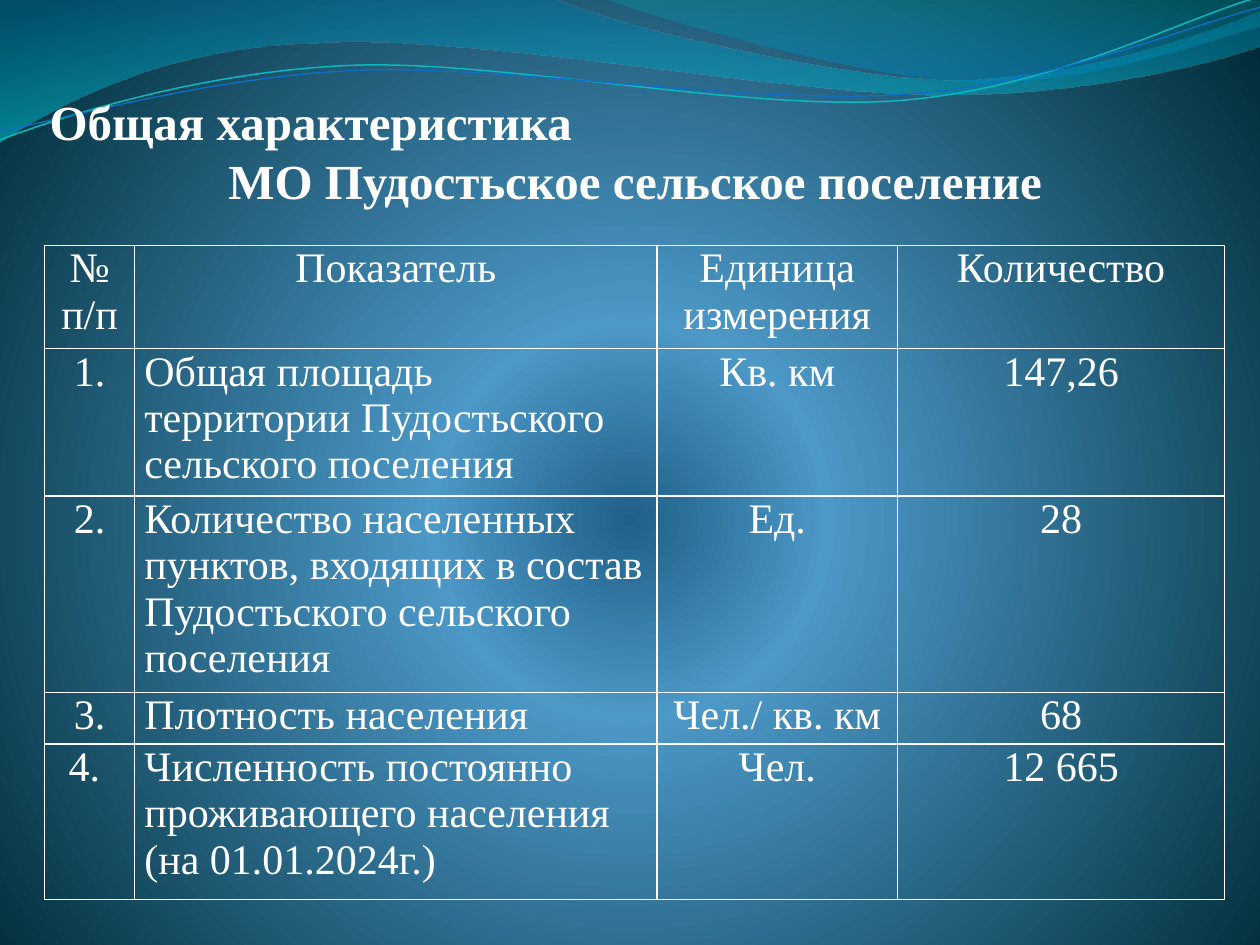
from dataclasses import dataclass

from lxml import etree
from pptx import Presentation
from pptx.dml.color import RGBColor
from pptx.enum.text import MSO_ANCHOR, PP_ALIGN as Align
from pptx.oxml import parse_xml
from pptx.oxml.ns import nsdecls, qn
from pptx.util import Cm, Pt


@dataclass(frozen=True)
class Theme:
    font: str = "Times New Roman"
    ink: str = "FFFFFF"
    title_size: int = 28
    title_leading: int = 34
    table_size: int = 24
    rule_width: int = 1
    # Gradient stops: position %, colour, opacity %
    backdrop: tuple = ((0, "1F6088", 100), (25, "4C98C7", 100), (100, "002C38", 100))
    wide_wave: tuple = ((0, "0074A1", 45), (100, "00C6CF", 55))
    small_wave: tuple = ((0, "00A1A9", 30), (80, "008BBF", 45))
    teal_line: str = "0AB8BF"
    blue_line: str = "0F6FC6"


THEME = Theme()
DOWNWARD = '<a:lin {} ang="5400000" scaled="0"/>'
RADIAL = ('<a:path {} path="circle">'
          '<a:fillToRect l="10000" t="110000" r="10000" b="100000"/></a:path>')

# Wave outlines in cm: a pair is a straight step, six numbers are a Bézier step
WIDE_WAVE = [(0, 0), (11.18, -0.03), (12.09, 0.43, 16.87, 1.6, 19.25, 1.6),
             (21.67, 1.6, 24.33, 0.66, 25.4, 0.23), (25.43, 0.91),
             (24.97, 1.12, 22.1, 1.93, 18.95, 1.91),
             (15.8, 1.91, 9.7, 0.71, 6.53, 0.86),
             (3.28, 0.91, 1.17, 2.11, -0.03, 2.87), (0, 0)]
SMALL_WAVE = [(12.17, -0.03), (12.93, 0.28, 17.32, 1.57, 19.53, 1.65),
              (21.74, 1.75, 24.41, 0.81, 25.4, 0.53), (25.4, 0), (12.17, -0.03)]
TEAL_LINE = [(0, 2.82), (1.22, 2.36, 4.01, 1.45, 7.04, 1.32),
             (10.03, 1.19, 15.06, 2.26, 18.11, 2.03),
             (21.16, 1.8, 23.83, 0.38, 25.35, -0.05)]
BLUE_LINE = [(0, 2.64), (1.19, 2.44, 4.17, 1.55, 7.19, 1.42),
             (10.24, 1.3, 15.16, 2.13, 18.21, 1.9),
             (21.23, 1.7, 23.9, 0.53, 25.4, 0.15)]

TITLE = [("Общая характеристика", Align.LEFT),
         ("МО Пудостьское сельское поселение", Align.CENTER)]
COLUMN_WIDTHS = [1.81, 10.54, 4.84, 6.6]
ROW_HEIGHTS = [2.08, 2.97, 3.96, 1.04, 3.13]
INDICATORS = [
    ("№ п/п", "Показатель", "Единица измерения", "Количество"),
    ("1.", "Общая площадь территории Пудостьского сельского поселения",
     "Кв. км", "147,26"),
    ("2.", "Количество населенных пунктов, входящих в состав "
     "Пудостьского сельского поселения", "Ед.", "28"),
    ("3.", "Плотность населения", "Чел./ кв. км", "68"),
    ("4. ", "Численность постоянно проживающего населения (на 01.01.2024г.)",
     "Чел.", "12 665"),
]


def paint_gradient(fill, owner, stops, direction):
    """Give fill, which lives inside the XML element owner, stops with opacity."""
    fill.gradient()
    gradient = owner.find(".//" + qn("a:gradFill"))
    for child in list(gradient):
        gradient.remove(child)
    stop_list = etree.SubElement(gradient, qn("a:gsLst"))
    for position, colour, opacity in stops:
        stop = etree.SubElement(stop_list, qn("a:gs"), pos=str(position * 1000))
        rgb = etree.SubElement(stop, qn("a:srgbClr"), val=colour)
        if opacity < 100:
            etree.SubElement(rgb, qn("a:alpha"), val=str(opacity * 1000))
    gradient.append(parse_xml(direction.format(nsdecls("a"))))


def add_outline(slide, left, top, outline, close):
    """Build a freeform through all points, then bend its Bézier steps."""
    points = [(Cm(left + x), Cm(top + y)) for step in outline
              for x, y in zip(step[::2], step[1::2])]
    builder = slide.shapes.build_freeform(*points[0])
    builder.add_line_segments(points[1:], close=close)
    shape = builder.convert_to_shape()
    shape.shadow.inherit = False
    segments = iter(shape.element.findall(".//" + qn("a:lnTo")))
    for step in outline[1:]:
        first = next(segments)
        if len(step) == 6:
            first.tag = qn("a:cubicBezTo")
            for _ in range(2):
                segment = next(segments)
                first.append(segment[0])
                segment.getparent().remove(segment)
    return shape


def add_waves(slide, left, top):
    for outline, stops in ((WIDE_WAVE, THEME.wide_wave), (SMALL_WAVE, THEME.small_wave)):
        wave = add_outline(slide, left, top, outline, close=True)
        paint_gradient(wave.fill, wave.element, stops, DOWNWARD)
        wave.line.fill.background()
    for outline, colour, width in ((TEAL_LINE, THEME.teal_line, 0.85),
                                   (BLUE_LINE, THEME.blue_line, 0.75)):
        wave = add_outline(slide, left, top, outline, close=False)
        wave.fill.background()
        wave.line.color.rgb = RGBColor.from_string(colour)
        wave.line.width = Pt(width)


def style_text(paragraph, size, align, bold=False):
    paragraph.alignment = align
    font = paragraph.font
    font.name, font.size, font.bold = THEME.font, Pt(size), bold
    font.color.rgb = RGBColor.from_string(THEME.ink)


def add_title(slide, left, top, width, height):
    frame = slide.shapes.add_textbox(Cm(left), Cm(top), Cm(width), Cm(height)).text_frame
    frame.word_wrap = True
    frame.text = "\n".join(line for line, _ in TITLE)
    for paragraph, (_, align) in zip(frame.paragraphs, TITLE):
        paragraph.line_spacing = Pt(THEME.title_leading)
        style_text(paragraph, THEME.title_size, align, bold=True)


def set_borders(cell):
    properties = cell._tc.get_or_add_tcPr()
    for index, side in enumerate(("lnL", "lnR", "lnT", "lnB")):
        properties.insert(index, parse_xml(
            f'<a:{side} {nsdecls("a")} w="{Pt(THEME.rule_width)}"><a:solidFill>'
            f'<a:srgbClr val="{THEME.ink}"/></a:solidFill></a:{side}>'))


def add_indicators(slide, left, top):
    table = slide.shapes.add_table(
        len(ROW_HEIGHTS), len(COLUMN_WIDTHS), Cm(left), Cm(top),
        Cm(sum(COLUMN_WIDTHS)), Cm(sum(ROW_HEIGHTS))).table
    table.first_row = table.horz_banding = False
    for column, width in zip(table.columns, COLUMN_WIDTHS):
        column.width = Cm(width)
    for r, (row, height, texts) in enumerate(zip(table.rows, ROW_HEIGHTS, INDICATORS)):
        row.height = Cm(height)
        for c, (cell, text) in enumerate(zip(row.cells, texts)):
            cell.text = text
            cell.fill.background()
            cell.margin_left = cell.margin_right = Cm(0.2)
            cell.margin_top = cell.margin_bottom = 0
            cell.vertical_anchor = MSO_ANCHOR.TOP
            align = Align.LEFT if r and c == 1 else Align.CENTER
            style_text(cell.text_frame.paragraphs[0], THEME.table_size, align)
            set_borders(cell)


def main():
    deck = Presentation()
    deck.slide_width, deck.slide_height = Cm(25.4), Cm(19.05)
    slide = deck.slides.add_slide(deck.slide_layouts[6])
    paint_gradient(slide.background.fill, slide.element, THEME.backdrop, RADIAL)
    add_waves(slide, 0, 0)
    add_indicators(slide, 0.9, 4.95)
    add_title(slide, 0.75, 1.7, 24.11, 2.64)
    deck.save("out.pptx")


if __name__ == "__main__":
    main()
